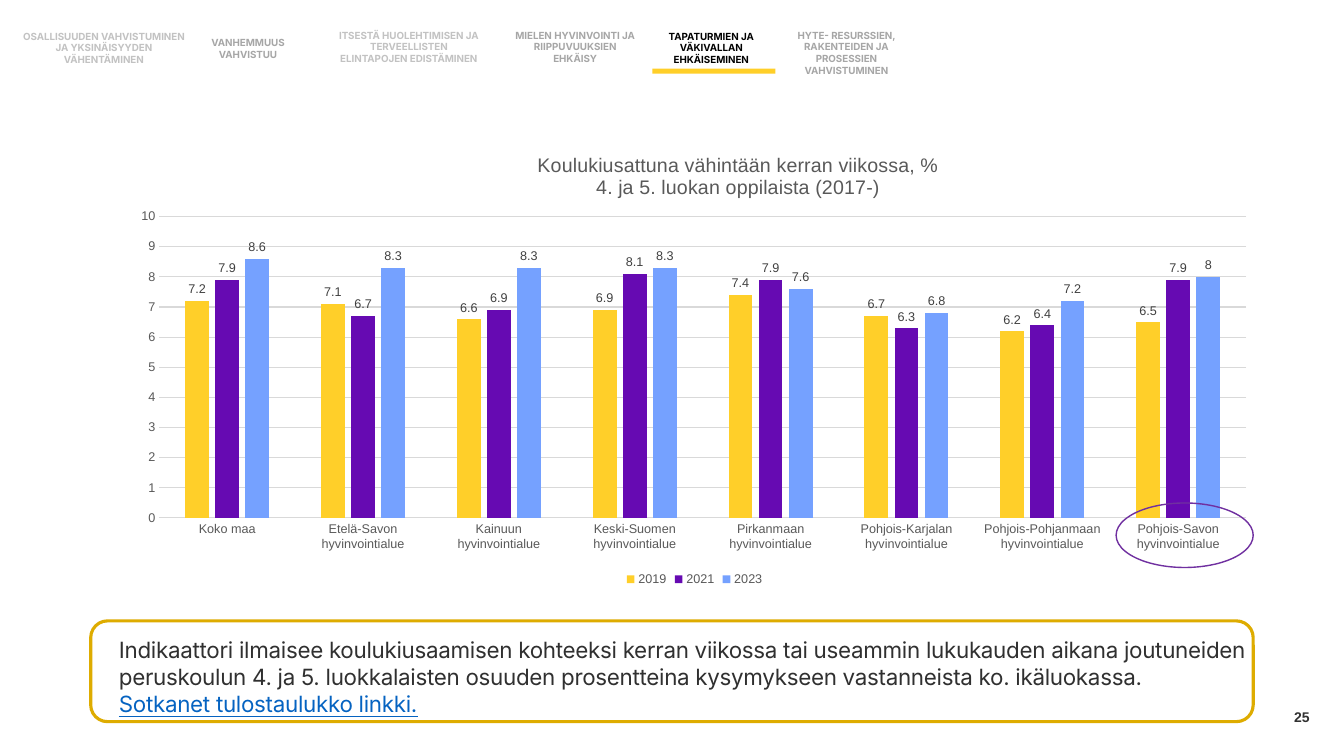
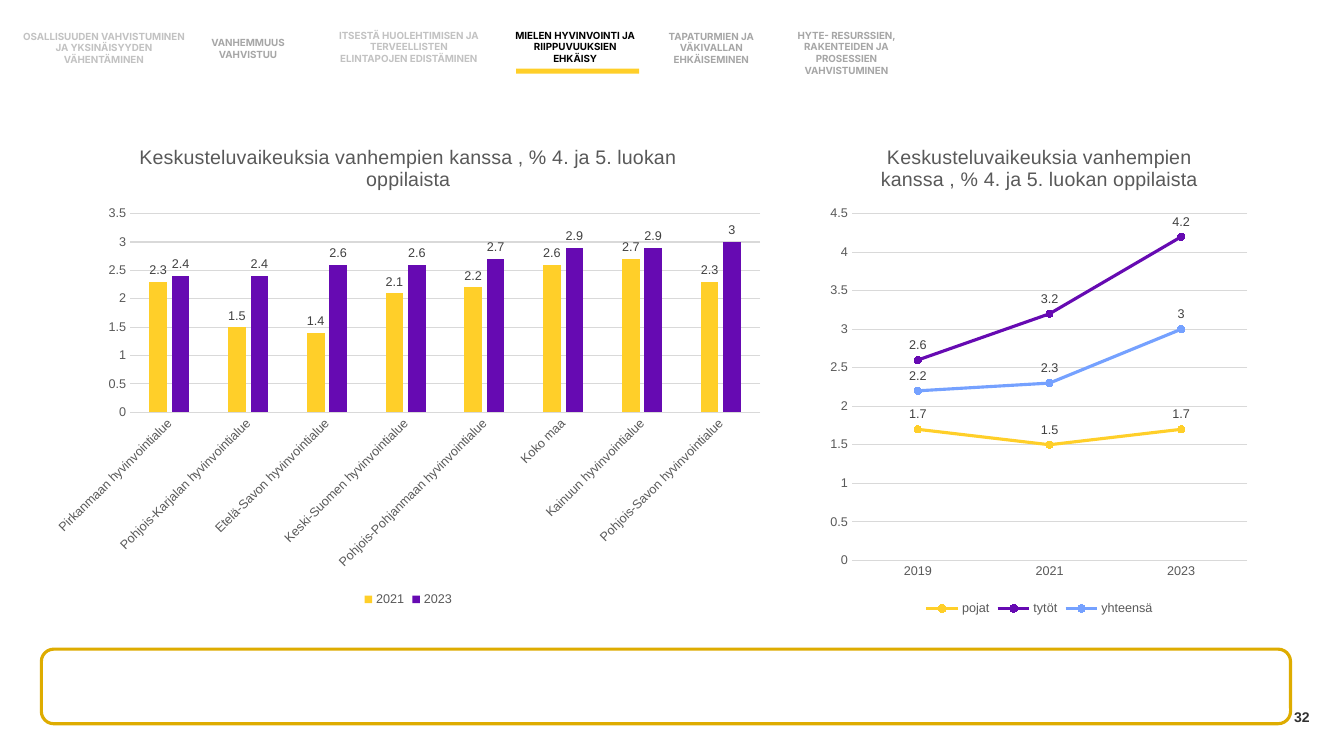
from dataclasses import dataclass

from pptx import Presentation
from pptx.chart.data import CategoryChartData
from pptx.dml.color import RGBColor
from pptx.enum.chart import XL_CHART_TYPE, XL_LABEL_POSITION, XL_LEGEND_POSITION
from pptx.enum.chart import XL_MARKER_STYLE, XL_TICK_MARK
from pptx.enum.shapes import MSO_SHAPE
from pptx.enum.text import MSO_ANCHOR, PP_ALIGN
from pptx.oxml import parse_xml
from pptx.oxml.ns import nsdecls, qn
from pptx.util import Inches, Pt

COLUMNS = XL_CHART_TYPE.COLUMN_CLUSTERED
LINES = XL_CHART_TYPE.LINE_MARKERS
LABEL_POSITIONS = {COLUMNS: XL_LABEL_POSITION.OUTSIDE_END, LINES: XL_LABEL_POSITION.ABOVE}
LEGEND_BOTTOM = XL_LEGEND_POSITION.BOTTOM
CIRCLE = XL_MARKER_STYLE.CIRCLE
NO_TICK = XL_TICK_MARK.NONE
RECTANGLE, ROUNDED, OVAL = MSO_SHAPE.RECTANGLE, MSO_SHAPE.ROUNDED_RECTANGLE, MSO_SHAPE.OVAL
LEFT, CENTER, RIGHT = PP_ALIGN.LEFT, PP_ALIGN.CENTER, PP_ALIGN.RIGHT
TOP, MIDDLE = MSO_ANCHOR.TOP, MSO_ANCHOR.MIDDLE


@dataclass(frozen=True)
class Theme:
    yellow: str = "FFCF29"
    purple: str = "660AB2"
    blue: str = "75A1FF"
    frame: str = "DEAC00"
    ring: str = "7030A0"
    active: str = "000000"
    muted: str = "A6A6A6"
    faint: str = "C2C2C2"
    body: str = "303030"
    number: str = "313131"
    link: str = "0563C1"
    axis_text: str = "595959"
    label_text: str = "404040"
    grid: str = "D9D9D9"
    body_font: str = "Inter"
    chart_font: str = "Arial"
    tab_size: int = 7
    axis_size: int = 9
    number_size: int = 10
    title_size: int = 14
    body_size: int = 16


THEME = Theme()

TABS = [
    ("OSALLISUUDEN VAHVISTUMINEN JA YKSINÄISYYDEN VÄHENTÄMINEN", (0.22, 0.24, 1.62, 0.47), THEME.faint),
    ("VANHEMMUUS VAHVISTUU", (1.85, 0.36, 1.22, 0.24), THEME.muted),
    ("ITSESTÄ HUOLEHTIMISEN JA TERVEELLISTEN ELINTAPOJEN EDISTÄMINEN", (3.35, 0.29, 1.41, 0.35), THEME.faint),
    ("MIELEN HYVINVOINTI JA RIIPPUVUUKSIEN EHKÄISY", (5.07, 0.29, 1.27, 0.35), THEME.muted),
    ("TAPATURMIEN JA VÄKIVALLAN EHKÄISEMINEN", (6.42, 0.3, 1.27, 0.35), THEME.muted),
    ("HYTE- RESURSSIEN, RAKENTEIDEN JA PROSESSIEN\nVAHVISTUMINEN", (7.69, 0.29, 1.41, 0.47), THEME.muted),
]


def inches(box):
    return [Inches(length) for length in box]


def rgb(color):
    return RGBColor.from_string(color)


def style_font(font, size, color, name, bold=False):
    font.size, font.name, font.bold = Pt(size), name, bold
    font.color.rgb = rgb(color)


def add_text(page, box, text, *, size, color, font=THEME.body_font, bold=False,
             align=LEFT, anchor=TOP, spacing=None, link_line=None):
    frame = page.shapes.add_textbox(*inches(box)).text_frame
    frame.word_wrap = True
    frame.vertical_anchor = anchor
    frame.margin_left = frame.margin_right = frame.margin_top = frame.margin_bottom = 0
    for index, line in enumerate(text.split("\n")):
        para = frame.paragraphs[0] if index == 0 else frame.add_paragraph()
        para.alignment = align
        span = para.add_run()
        span.text = line
        is_link = index == link_line
        style_font(span.font, size, THEME.link if is_link else color, font, bold)
        if is_link:
            span.font.underline = True
        if spacing is not None:
            span.font._element.set("spc", str(round(spacing * 100)))


def add_outline(page, kind, box, *, fill=None, line=None, width=1):
    shape = page.shapes.add_shape(kind, *inches(box))
    shape.shadow.inherit = False
    if fill:
        shape.fill.solid()
        shape.fill.fore_color.rgb = rgb(fill)
    else:
        shape.fill.background()
    if line:
        shape.line.color.rgb = rgb(line)
        shape.line.width = Pt(width)
    else:
        shape.line.fill.background()


def add_navigation(page, active):
    for index, (text, box, color) in enumerate(TABS):
        add_text(page, box, text, size=THEME.tab_size, bold=True, align=CENTER, anchor=MIDDLE,
                 color=THEME.active if index == active else color)
    add_outline(page, RECTANGLE, (TABS[active][1][0] + 0.05, 0.68, 1.22, 0.05), fill=THEME.yellow)


def add_page(deck, number, active):
    page = deck.slides.add_slide(deck.slide_layouts[6])
    add_text(page, (9.99, 6.91, 3, 0.4), str(number), size=THEME.number_size, color=THEME.number,
             font=THEME.chart_font, bold=True, align=RIGHT, anchor=MIDDLE)
    add_navigation(page, active)
    return page


def place_part(part, index, box, area, inner=False):
    for old in part.findall(qn("c:layout")):
        part.remove(old)
    names = ("x", "y", "w", "h")[:len(area)]
    shares = [length / box[2 + place % 2] for place, length in enumerate(area)]
    target = '<c:layoutTarget val="inner"/>' if inner else ""
    modes = "".join(f'<c:{name}Mode val="edge"/>' for name in names[:2])
    values = "".join(f'<c:{name} val="{share:.4f}"/>' for name, share in zip(names, shares))
    part.insert(index, parse_xml(
        f'<c:layout {nsdecls("c")}><c:manualLayout>{target}{modes}{values}</c:manualLayout></c:layout>'))


def style_title(chart, text):
    frame = chart.chart_title.text_frame
    for index, line in enumerate(text.split("\n")):
        para = frame.paragraphs[0] if index == 0 else frame.add_paragraph()
        para.alignment = CENTER
        span = para.add_run()
        span.text = line
        style_font(span.font, THEME.title_size, THEME.axis_text, THEME.chart_font)


def style_axes(chart, top, step):
    for axis in (chart.category_axis, chart.value_axis):
        axis.major_tick_mark = axis.minor_tick_mark = NO_TICK
        style_font(axis.tick_labels.font, THEME.axis_size, THEME.axis_text, THEME.chart_font)
    chart.category_axis.format.line.color.rgb = rgb(THEME.grid)
    chart.category_axis.format.line.width = Pt(0.75)
    values = chart.value_axis
    values.minimum_scale, values.maximum_scale, values.major_unit = 0, top, step
    values.format.line.fill.background()
    values.has_major_gridlines = True
    values.major_gridlines.format.line.color.rgb = rgb(THEME.grid)
    values.major_gridlines.format.line.width = Pt(0.75)


def style_series(series, kind, color):
    if kind == LINES:
        series.smooth = False
        series.format.line.color.rgb = rgb(color)
        series.format.line.width = Pt(2.25)
        series.marker.style, series.marker.size = CIRCLE, 5
        paint = series.marker.format
        paint.line.color.rgb = rgb(color)
    else:
        series.invert_if_negative = False
        paint = series.format
    paint.fill.solid()
    paint.fill.fore_color.rgb = rgb(color)
    labels = series.data_labels
    labels.show_value = True
    labels.position = LABEL_POSITIONS[kind]
    style_font(labels.font, THEME.axis_size, THEME.label_text, THEME.chart_font)


def add_chart(page, box, kind, title, categories, rows, *, plot, top, step,
              title_at=None, slanted=False):
    data = CategoryChartData()
    data.categories = categories
    for name, values, _ in rows:
        data.add_series(name, values)
    chart = page.shapes.add_chart(kind, *inches(box), data).chart
    style_font(chart.font, THEME.number_size, THEME.active, THEME.chart_font)
    style_title(chart, title)
    style_axes(chart, top, step)
    chart.has_legend = True
    chart.legend.position = LEGEND_BOTTOM
    chart.legend.include_in_layout = False
    style_font(chart.legend.font, THEME.axis_size, THEME.axis_text, THEME.chart_font)
    group = chart.plots[0]
    group.vary_by_categories = False
    if kind == COLUMNS:
        group.gap_width, group.overlap = 219, -27
    for series, (_, _, color) in zip(group.series, rows):
        style_series(series, kind, color)
    root = chart.element
    place_part(root.find(".//" + qn("c:plotArea")), 0, box, plot, inner=True)
    if title_at:
        place_part(root.find(".//" + qn("c:title")), 1, box, title_at)
    if slanted:
        body = root.find(".//" + "/".join(qn(tag) for tag in ("c:catAx", "c:txPr", "a:bodyPr")))
        body.set("rot", "-2700000")
        body.set("vert", "horz")


def add_bullying_page(deck):
    page = add_page(deck, 25, active=4)
    add_text(page, (1.18, 6.31, 11.26, 1.13),
             "Indikaattori ilmaisee koulukiusaamisen kohteeksi kerran viikossa tai useammin lukukauden "
             "aikana joutuneiden peruskoulun 4. ja 5. luokkalaisten osuuden prosentteina kysymykseen "
             "vastanneista ko. ikäluokassa.\nSotkanet tulostaulukko linkki.",
             size=THEME.body_size, color=THEME.body, spacing=-0.2, link_line=1)
    add_outline(page, ROUNDED, (0.9, 6.16, 11.53, 1), line=THEME.frame, width=2.25)
    areas = ["Etelä-Savon", "Kainuun", "Keski-Suomen", "Pirkanmaan", "Pohjois-Karjalan",
             "Pohjois-Pohjanmaan", "Pohjois-Savon"]
    add_chart(page, (1.18, 1.31, 11.42, 4.55), COLUMNS,
              "Koulukiusattuna vähintään kerran viikossa, %\n4. ja 5. luokan oppilaista (2017-)",
              ["Koko maa"] + [f"{area} hyvinvointialue" for area in areas],
              [("2019", (7.2, 7.1, 6.6, 6.9, 7.4, 6.7, 6.2, 6.5), THEME.yellow),
               ("2021", (7.9, 6.7, 6.9, 8.1, 7.9, 6.3, 6.4, 7.9), THEME.purple),
               ("2023", (8.6, 8.3, 8.3, 8.3, 7.6, 6.8, 7.2, 8), THEME.blue)],
              plot=(0.4, 0.84, 10.78, 2.99), top=10, step=1, title_at=(4.12, 0.17))
    add_outline(page, OVAL, (11.07, 4.99, 1.36, 0.64), line=THEME.ring)


def add_discussion_page(deck):
    page = add_page(deck, 32, active=3)
    add_outline(page, ROUNDED, (0.41, 6.44, 12.39, 0.74), line=THEME.frame, width=2.25)
    title = "Keskusteluvaikeuksia vanhempien kanssa , % 4. ja 5. luokan oppilaista"
    areas = ["Pirkanmaan", "Pohjois-Karjalan", "Etelä-Savon", "Keski-Suomen",
             "Pohjois-Pohjanmaan", "Kainuun", "Pohjois-Savon"]
    categories = [f"{area} hyvinvointialue" for area in areas]
    categories.insert(5, "Koko maa")
    add_chart(page, (0.41, 1.25, 7.28, 4.81), COLUMNS, title, categories,
              [("2021", (2.3, 1.5, 1.4, 2.1, 2.2, 2.6, 2.7, 2.3), THEME.yellow),
               ("2023", (2.4, 2.4, 2.6, 2.6, 2.7, 2.9, 2.9, 3), THEME.purple)],
              plot=(0.88, 0.87, 6.25, 1.97), top=3.5, step=0.5, slanted=True)
    add_chart(page, (8.16, 1.25, 4.3, 4.9), LINES, title, ["2019", "2021", "2023"],
              [("pojat", (1.7, 1.5, 1.7), THEME.yellow),
               ("tytöt", (2.6, 3.2, 4.2), THEME.purple),
               ("yhteensä", (2.2, 2.3, 3), THEME.blue)],
              plot=(0.29, 0.87, 3.92, 3.44), top=4.5, step=0.5)


def main():
    deck = Presentation()
    deck.slide_width, deck.slide_height = Inches(13.33), Inches(7.5)
    add_bullying_page(deck)
    add_discussion_page(deck)
    deck.save("out.pptx")


if __name__ == "__main__":
    main()
